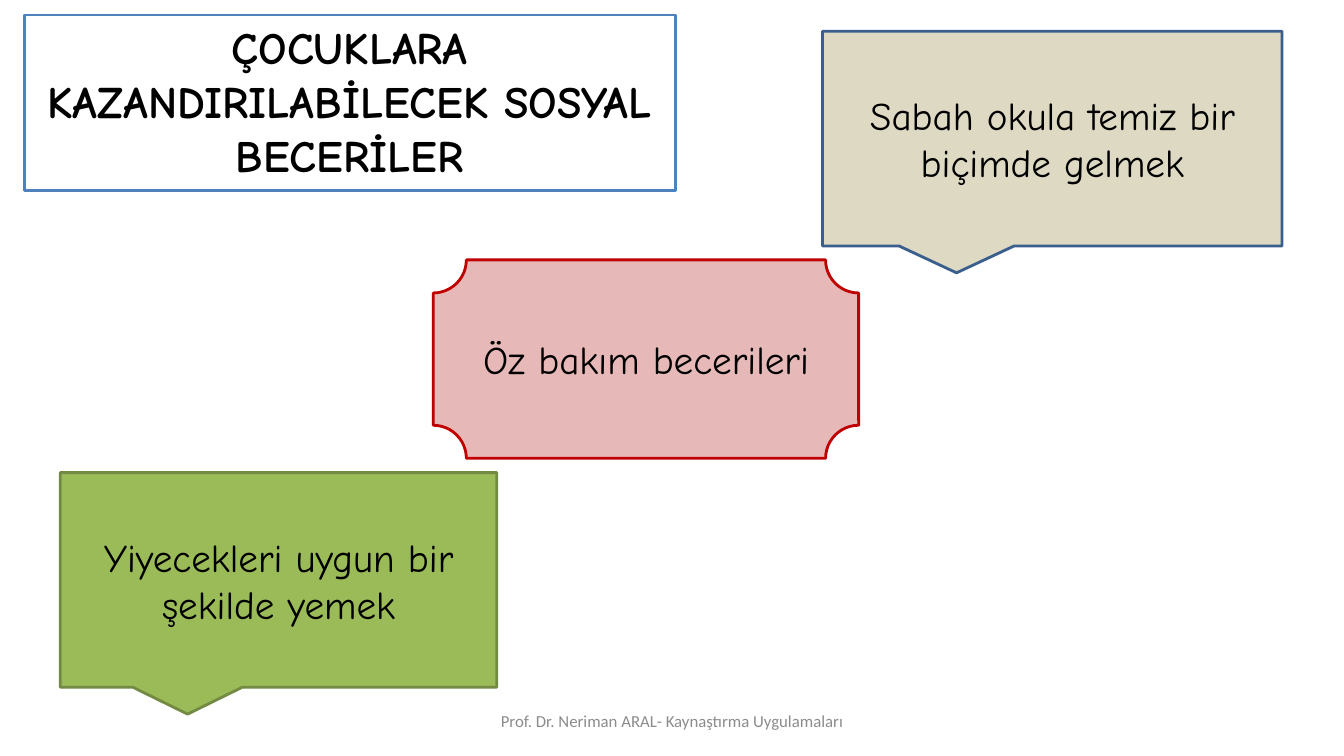
from pptx import Presentation
from pptx.dml.color import RGBColor
from pptx.enum.shapes import MSO_SHAPE
from pptx.enum.text import MSO_ANCHOR, PP_ALIGN
from pptx.util import Cm, Pt

RECT = MSO_SHAPE.RECTANGLE
PLAQUE = MSO_SHAPE.PLAQUE
CALL = MSO_SHAPE.RECTANGULAR_CALLOUT
MIDDLE = MSO_ANCHOR.MIDDLE
TOP = MSO_ANCHOR.TOP
CENTER = PP_ALIGN.CENTER

COLORS = {
    "white": "FFFFFF", "black": "000000", "gray": "8C8C8C",
    "blue": "4F81BD", "navy": "3A5F8C", "sand": "DDD9C3",
    "pink": "E6B9B8", "red": "C00000",
    "green": "9BBB59", "olive": "738A42",
}
BODY = {"name": "Comic Neue", "size": Pt(28), "bold": False}
TITLE = {"name": "Comic Neue", "size": Pt(32), "bold": True}
FOOT = {"name": "Calibri", "size": Pt(12), "bold": False}


def color(name):
    return RGBColor.from_string(COLORS[name])


def write(shape, text, style, ink="black", anchor=MIDDLE):
    frame = shape.text_frame
    frame.word_wrap = True
    frame.vertical_anchor = anchor
    line = frame.paragraphs[0]
    line.alignment = CENTER
    run = line.add_run()
    run.text = text
    for key, value in style.items():
        setattr(run.font, key, value)
    run.font.color.rgb = color(ink)


def panel(slide, kind, box, fill, edge):
    shape = slide.shapes.add_shape(kind, *map(Cm, box))
    shape.shadow.inherit = False
    shape.fill.solid()
    shape.fill.fore_color.rgb = color(fill)
    shape.line.color.rgb = color(edge)
    shape.line.width = Pt(2)
    return shape


def footer(slide, box, text):
    write(slide.shapes.add_textbox(*map(Cm, box)), text, FOOT, "gray")


def topic(slide, box, text):
    write(panel(slide, PLAQUE, box, "pink", "red"), text, BODY)


def skill(slide, box, text, fill, edge):
    write(panel(slide, CALL, box, fill, edge), text, BODY)


def heading(slide, box, text):
    write(panel(slide, RECT, box, "white", "blue"), text, TITLE, anchor=TOP)


def main():
    deck = Presentation()
    deck.slide_width, deck.slide_height = Cm(33.87), Cm(19.05)
    slide = deck.slides.add_slide(deck.slide_layouts[6])
    footer(slide, (11.58, 17.65, 10.72, 1.02),
           "Prof. Dr. Neriman ARAL- Kaynaştırma Uygulamaları")
    topic(slide, (10.92, 6.55, 10.72, 5), "Öz bakım becerileri")
    skill(slide, (1.52, 11.91, 11, 5.41),
          "Yiyecekleri uygun bir şekilde yemek", "green", "olive")
    skill(slide, (20.73, 0.79, 11.58, 5.41),
          "Sabah okula temiz bir biçimde gelmek", "sand", "navy")
    heading(slide, (0.61, 0.38, 16.41, 4.42),
            "ÇOCUKLARA KAZANDIRILABİLECEK SOSYAL BECERİLER")
    deck.save("out.pptx")


if __name__ == "__main__":
    main()
